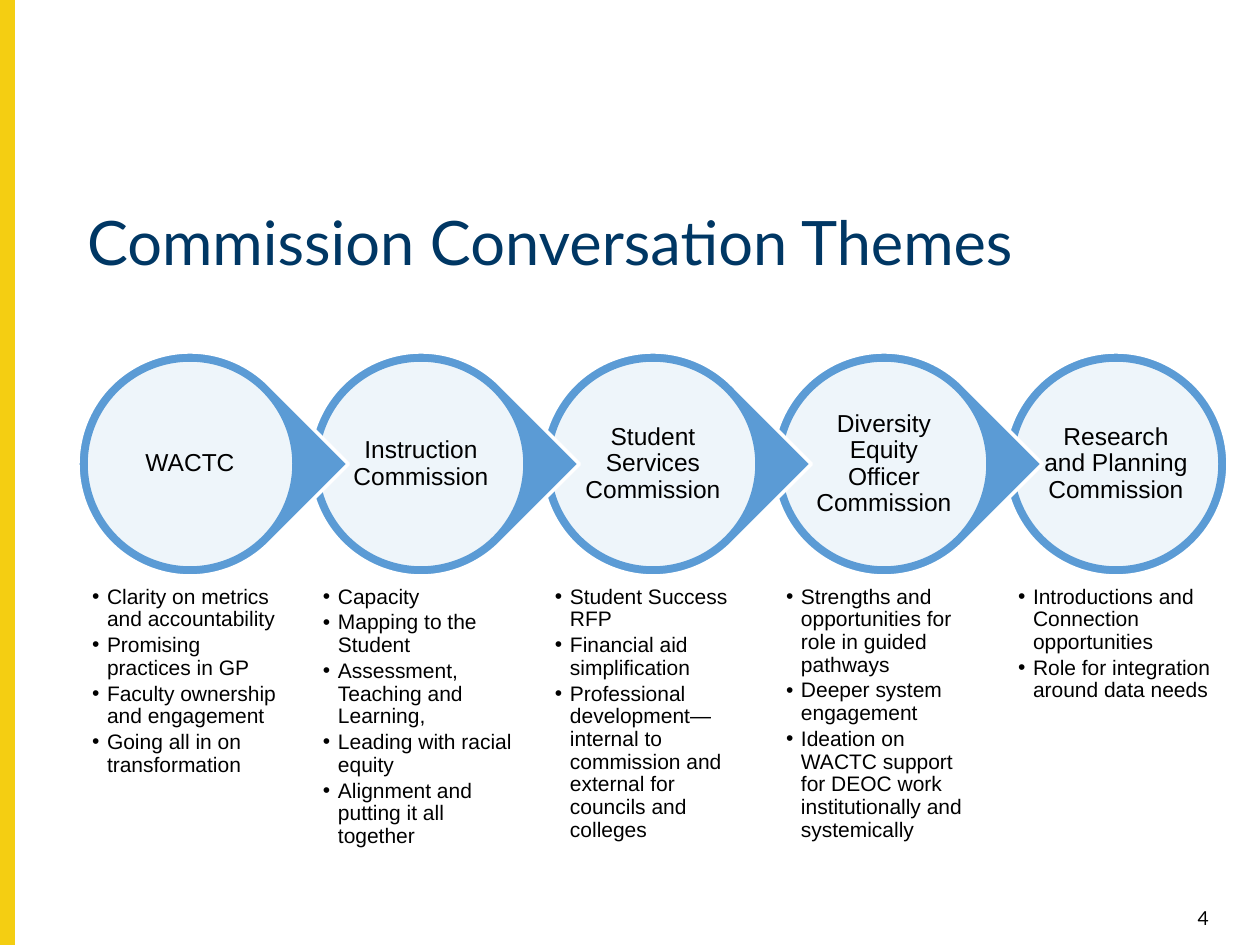
from dataclasses import dataclass

from lxml.etree import SubElement
from pptx import Presentation
from pptx.dml.color import RGBColor
from pptx.enum.shapes import MSO_SHAPE
from pptx.enum.text import MSO_ANCHOR, MSO_AUTO_SIZE, PP_ALIGN
from pptx.oxml.ns import qn
from pptx.util import Emu, Pt


@dataclass(frozen=True)
class Theme:
    """Colours, fonts and type sizes of the deck."""
    gold: RGBColor = RGBColor(0xF4, 0xCE, 0x12)
    navy: RGBColor = RGBColor(0x00, 0x37, 0x64)
    blue: RGBColor = RGBColor(0x5B, 0x9B, 0xD5)
    white: RGBColor = RGBColor(0xFF, 0xFF, 0xFF)
    black: RGBColor = RGBColor(0x00, 0x00, 0x00)
    heading_font: str = "Lato"
    body_font: str = "Arial"
    title_size: int = 35
    label_size: int = 14
    bullet_size: int = 12
    number_size: int = 11


THEME = Theme()
PX_PER_INCH = 126
COMMISSIONS = [
    ("WACTC", [
        "Clarity on metrics and accountability",
        "Promising practices in GP",
        "Faculty ownership and engagement",
        "Going all in on transformation"]),
    ("Instruction Commission", [
        "Capacity",
        "Mapping to the Student",
        "Assessment, Teaching and Learning,",
        "Leading with racial equity",
        "Alignment and putting it all together"]),
    ("Student Services Commission", [
        "Student Success RFP",
        "Financial aid simplification",
        "Professional development—internal to commission and external for councils and colleges"]),
    ("Diversity Equity Officer Commission", [
        "Strengths and opportunities for role in guided pathways",
        "Deeper system engagement",
        "Ideation on WACTC support for DEOC work institutionally and systemically"]),
    ("Research and Planning Commission", [
        "Introductions and Connection opportunities",
        "Role for integration around data needs"]),
]


def px(length):
    """Turn pixels into EMU."""
    return Emu(round(length * 914400 / PX_PER_INCH))


def assign(target, values):
    """Set each named attribute on the target."""
    for name, value in values.items():
        setattr(target, name, value)


def add_figure(page, kind, box, fill, line, width, alpha=None):
    """Add a filled and outlined preset shape."""
    shape = page.shapes.add_shape(kind, *map(px, box))
    shape.shadow.inherit = False
    shape.fill.solid()
    shape.fill.fore_color.rgb = fill
    shape.line.color.rgb = line
    shape.line.width = Pt(width)
    if alpha is not None:
        colour = shape.element.spPr.find(f"{qn('a:solidFill')}/{qn('a:srgbClr')}")
        SubElement(colour, qn("a:alpha"), val=str(alpha * 1000))
    return shape


def add_bullet(para, indent):
    """Give a paragraph a hanging round bullet."""
    settings = para._p.get_or_add_pPr()
    settings.set("marL", str(px(indent)))
    settings.set("indent", str(px(-indent)))
    SubElement(settings, qn("a:buFont"), typeface="Arial")
    SubElement(settings, qn("a:buChar"), char="•")


def write_text(shape, lines, inset, font, size, colour, anchor=MSO_ANCHOR.TOP, bullet=0, **layout):
    """Fill a text frame with evenly formatted paragraphs."""
    frame = shape.text_frame
    side, edge = map(px, inset)
    assign(frame, {"word_wrap": True, "auto_size": MSO_AUTO_SIZE.NONE,
                   "vertical_anchor": anchor, "margin_left": side,
                   "margin_right": side, "margin_top": edge, "margin_bottom": edge})
    for index, line in enumerate(lines):
        para = frame.add_paragraph() if index else frame.paragraphs[0]
        assign(para, layout)
        if bullet:
            add_bullet(para, bullet)
        span = para.add_run()
        span.text = line
        assign(span.font, {"name": font, "size": Pt(size)})
        span.font.color.rgb = colour


def add_title(page, box, text):
    """Place and format the title placeholder."""
    title = page.shapes.title
    assign(title, dict(zip(("left", "top", "width", "height"), map(px, box))))
    write_text(title, [text], (13, 13), THEME.heading_font, THEME.title_size, THEME.navy,
               alignment=PP_ALIGN.LEFT, line_spacing=0.9)


def add_page_number(page, box, number):
    """Place the page number."""
    holder = page.shapes.add_textbox(*map(px, box))
    write_text(holder, [str(number)], (13, 6), THEME.heading_font, THEME.number_size,
               THEME.black, alignment=PP_ALIGN.RIGHT)


def add_commission(page, box, name, themes, is_last):
    """Draw one commission: its marker, disc, name and bullet list."""
    left, top, size, list_height = box
    rim, margin = 8, 37
    disc, label = size - 2 * rim, size - 2 * margin
    kind = MSO_SHAPE.OVAL if is_last else MSO_SHAPE.TEAR
    marker = add_figure(page, kind, (left, top, size, size), THEME.blue, THEME.white, 2)
    marker.rotation = 0 if is_last else 45
    add_figure(page, MSO_SHAPE.OVAL, (left + rim, top + rim, disc, disc),
               THEME.white, THEME.blue, 2, alpha=90)
    caption = page.shapes.add_textbox(
        *map(px, (left + margin, top + margin, label, label)))
    write_text(caption, [name], (2, 2), THEME.body_font, THEME.label_size, THEME.black,
               MSO_ANCHOR.MIDDLE, alignment=PP_ALIGN.CENTER, line_spacing=0.9)
    listing = page.shapes.add_textbox(
        *map(px, (left + rim, top + size + 4, disc, list_height)))
    write_text(listing, themes, (6, 6), THEME.body_font, THEME.bullet_size, THEME.black,
               bullet=15, line_spacing=0.9, space_after=Pt(1.8))


def add_chain(page, box, commissions):
    """Spread the commissions evenly, each one overlapping the next."""
    left, top, width, height = box
    size, last = 224, len(commissions) - 1
    for index in range(last, -1, -1):
        offset = index * (width - size) // last
        add_commission(page, (left + offset, top, size, height - size - 4),
                       *commissions[index], index == last)


def main():
    """Build and save the deck."""
    deck = Presentation()
    assign(deck, {"slide_width": px(1260), "slide_height": px(945)})
    page = deck.slides.add_slide(deck.slide_layouts.get_by_name("Title Only"))
    add_figure(page, MSO_SHAPE.RECTANGLE, (0, 0, 14, 945), THEME.gold, THEME.gold, 1)
    add_title(page, (74, 200, 1144, 108), "Commission Conversation Themes")
    add_page_number(page, (1159, 900, 63, 26), 4)
    add_chain(page, (78, 352, 1150, 351), COMMISSIONS)
    deck.save("out.pptx")


if __name__ == "__main__":
    main()
